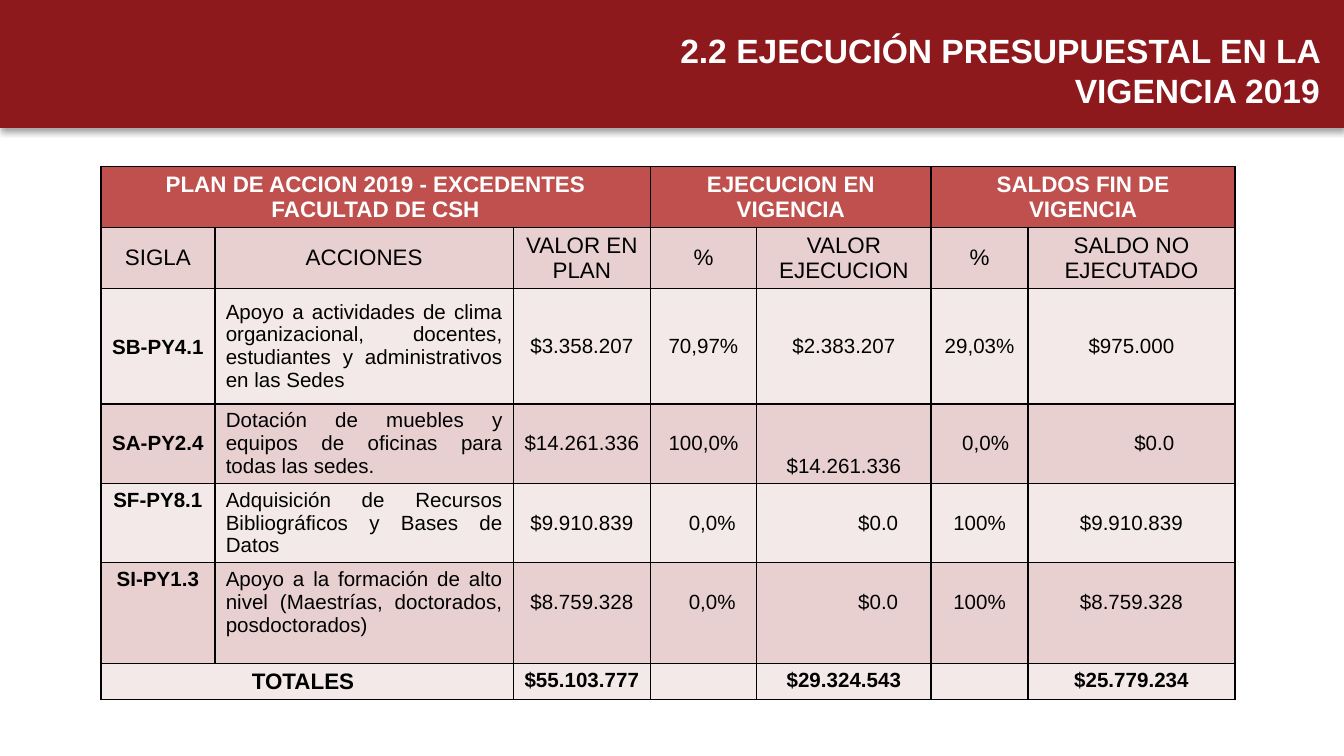
from lxml.etree import SubElement
from pptx import Presentation
from pptx.dml.color import RGBColor
from pptx.enum.shapes import MSO_SHAPE as Shape
from pptx.enum.text import MSO_ANCHOR as Anchor, MSO_AUTO_SIZE as AutoSize
from pptx.enum.text import PP_ALIGN as Align
from pptx.oxml.ns import qn
from pptx.util import Inches, Pt

MAROON = RGBColor(0x8D, 0x19, 0x1D)
RED = RGBColor(0xC0, 0x50, 0x4D)
ROSE = RGBColor(0xE8, 0xD0, 0xD0)
PALE = RGBColor(0xF4, 0xE9, 0xE9)
WHITE = RGBColor(0xFF, 0xFF, 0xFF)
BLACK = RGBColor(0, 0, 0)

SLIDE_WIDTH = Inches(10)
SLIDE_HEIGHT = SLIDE_WIDTH * 9 // 16

COLUMN_WIDTHS = [0.85, 2.22, 1.02, 0.79, 1.3, 0.72, 1.54]
ROW_HEIGHTS = [0.44, 0.45, 0.86, 0.58, 0.58, 0.75, 0.26]
ROW_FILLS = [RED, ROSE, PALE, ROSE, PALE, ROSE, PALE]
MERGES = [(0, 0, 2), (0, 3, 4), (0, 5, 6), (6, 0, 1)]

ROWS = [
    ["PLAN DE ACCION 2019 - EXCEDENTES FACULTAD DE CSH", "", "",
     "EJECUCION EN VIGENCIA", "", "SALDOS FIN DE VIGENCIA", ""],
    ["SIGLA", "ACCIONES", "VALOR EN PLAN", "%", "VALOR EJECUCION", "%",
     "SALDO NO EJECUTADO"],
    ["SB-PY4.1",
     "Apoyo a actividades de clima organizacional, docentes, estudiantes "
     "y administrativos en las Sedes",
     "$3.358.207", "70,97%", "$2.383.207", "29,03%", "$975.000"],
    ["SA-PY2.4",
     "Dotación de muebles y equipos de oficinas para todas las sedes.",
     "$14.261.336", "100,0%", "$14.261.336", "0,0%", "$0.0"],
    ["SF-PY8.1",
     "Adquisición de Recursos Bibliográficos y Bases de Datos",
     "$9.910.839", "0,0%", "$0.0", "100%", "$9.910.839"],
    ["SI-PY1.3",
     "Apoyo a la formación de alto nivel (Maestrías, doctorados, "
     "posdoctorados)",
     "$8.759.328", "0,0%", "$0.0", "100%", "$8.759.328"],
    ["TOTALES", "", "$55.103.777", "", "$29.324.543", "", "$25.779.234"],
]

# Zero amounts sit right of the column centre: extra left margin by cell
ZERO_INDENTS = {(3, 5): 0.09, (3, 6): 0.34, (4, 3): 0.13, (4, 4): 0.51,
                (5, 3): 0.13, (5, 4): 0.51}
LINE = 0.17  # height of one 11 pt line


def set_attributes(target, values):
    for name, value in values.items():
        setattr(target, name, value)


def style_font(font, size, color, bold):
    set_attributes(font, {"name": "Arial", "size": Pt(size), "bold": bold})
    font.color.rgb = color


def add_shadow(shape):
    """Soft shadow straight below the shape."""
    effects = SubElement(shape._element.spPr, qn("a:effectLst"))
    shadow = SubElement(effects, qn("a:outerShdw"), blurRad=str(Pt(3.1)),
                        dist=str(Pt(1.8)), dir="5400000", rotWithShape="0")
    color = SubElement(shadow, qn("a:srgbClr"), val=str(BLACK))
    SubElement(color, qn("a:alpha"), val="35000")


def add_banner(slide):
    banner = slide.shapes.add_shape(Shape.RECTANGLE, 0, 0,
                                    SLIDE_WIDTH, Inches(0.95))
    banner.fill.solid()
    banner.fill.fore_color.rgb = MAROON
    banner.line.color.rgb = MAROON
    banner.line.width = Pt(0.75)
    add_shadow(banner)


def add_title(slide, text):
    box = slide.shapes.add_textbox(Inches(3.98), Inches(0.17),
                                   Inches(5.94), Inches(0.71))
    set_attributes(box.text_frame, {"word_wrap": True,
                                    "auto_size": AutoSize.SHAPE_TO_FIT_TEXT})
    paragraph = box.text_frame.paragraphs[0]
    paragraph.alignment = Align.RIGHT
    run = paragraph.add_run()
    run.text = text
    style_font(run.font, 18, WHITE, True)


def add_borders(cell):
    """Black lines on all sides; these go before the cell fill."""
    properties = cell._tc.get_or_add_tcPr()
    for side in ("L", "R", "T", "B"):
        line = SubElement(properties, qn(f"a:ln{side}"), w=str(Pt(1)))
        fill = SubElement(line, qn("a:solidFill"))
        SubElement(fill, qn("a:srgbClr"), val=str(BLACK))


def cell_layout(row, column):
    """Vertical anchor and margins of a cell."""
    left = right = 0.07
    top = bottom = 0.04
    if row in (3, 4, 5):
        if column > 1 or (row, column) == (3, 0):
            top += LINE
        if (row, column) == (3, 4):
            top += LINE
        left += ZERO_INDENTS.get((row, column), 0)
    if column == 1:
        left = right = 0.08
    if (row, column) == (2, 0):
        left = right = top = 0.01
        bottom = 0
    if (row, column) == (6, 0):
        right = 0.13
    return {"vertical_anchor": Anchor.MIDDLE if row < 3 else Anchor.TOP,
            "margin_left": Inches(left), "margin_right": Inches(right),
            "margin_top": Inches(top), "margin_bottom": Inches(bottom)}


def fill_cell(cell, row, column, text):
    is_action = column == 1 and 2 <= row <= 5
    is_bold = row in (0, 6) or (column == 0 and row >= 2)
    size = 12 if row < 2 or text == "TOTALES" else 11
    add_borders(cell)
    cell.fill.solid()
    cell.fill.fore_color.rgb = ROW_FILLS[row]
    set_attributes(cell, cell_layout(row, column))
    paragraph = cell.text_frame.paragraphs[0]
    paragraph.alignment = Align.JUSTIFY if is_action else Align.CENTER
    if text:
        run = paragraph.add_run()
        run.text = text
        style_font(run.font, size, WHITE if row == 0 else BLACK, is_bold)
    else:
        SubElement(paragraph._p, qn("a:endParaRPr"), sz="1100")


def add_budget_table(slide):
    frame = slide.shapes.add_table(
        len(ROWS), len(COLUMN_WIDTHS), Inches(0.75), Inches(1.24),
        Inches(sum(COLUMN_WIDTHS)), Inches(sum(ROW_HEIGHTS)))
    table = frame.table
    set_attributes(table, {"first_row": False, "horz_banding": False})
    for column, width in zip(table.columns, COLUMN_WIDTHS):
        column.width = Inches(width)
    for row, height in zip(table.rows, ROW_HEIGHTS):
        row.height = Inches(height)
    for row, texts in enumerate(ROWS):
        for column, text in enumerate(texts):
            fill_cell(table.cell(row, column), row, column, text)
    for row, first, last in MERGES:
        table.cell(row, first).merge(table.cell(row, last))


def main():
    presentation = Presentation()
    set_attributes(presentation, {"slide_width": SLIDE_WIDTH,
                                  "slide_height": SLIDE_HEIGHT})
    slide = presentation.slides.add_slide(presentation.slide_layouts[6])
    add_banner(slide)
    add_budget_table(slide)
    add_title(slide, "2.2 EJECUCIÓN PRESUPUESTAL EN LA VIGENCIA 2019")
    presentation.save("out.pptx")


if __name__ == "__main__":
    main()
